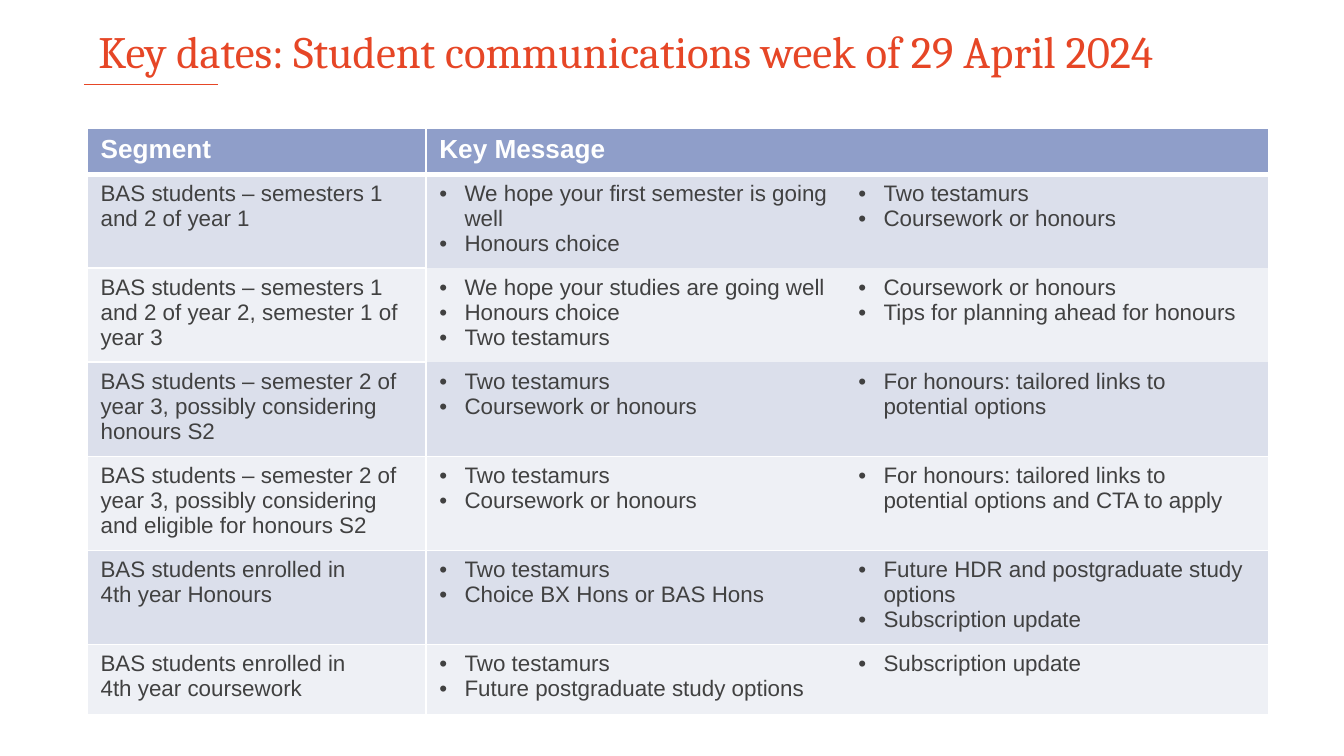
from lxml import etree
from pptx import Presentation
from pptx.dml.color import RGBColor
from pptx.enum import shapes, text
from pptx.oxml import ns
from pptx.util import Pt

COLORS = {
    "accent": "E64626",
    "header": "8F9EC9",
    "odd": "DBDFEB",
    "even": "EEF0F5",
    "body": "414141",
    "white": "FFFFFF",
}
NO_BREAK_SPACE = chr(160)
FOURTH_YEAR = f"BAS students enrolled in 4th{NO_BREAK_SPACE}year"
HEADINGS = ["Segment", "Key Message"]
SEGMENTS = [
    ("BAS students – semesters 1 and 2 of year 1",
     ["We hope your first semester is going well", "Honours choice"],
     ["Two testamurs", "Coursework or honours"]),
    ("BAS students – semesters 1 and 2 of year 2, semester 1 of year 3",
     ["We hope your studies are going well", "Honours choice", "Two testamurs"],
     ["Coursework or honours", "Tips for planning ahead for honours"]),
    ("BAS students – semester 2 of year 3, possibly considering honours S2",
     ["Two testamurs", "Coursework or honours"],
     ["For honours: tailored links to potential options"]),
    ("BAS students – semester 2 of year 3, possibly considering and eligible for honours S2",
     ["Two testamurs", "Coursework or honours"],
     ["For honours: tailored links to potential options and CTA to apply"]),
    (f"{FOURTH_YEAR} Honours",
     ["Two testamurs", "Choice BX Hons or BAS Hons"],
     ["Future HDR and postgraduate study options", "Subscription update"]),
    (f"{FOURTH_YEAR} coursework",
     ["Two testamurs", "Future postgraduate study options"],
     ["Subscription update"]),
]
COLUMN_WIDTHS = [181.5, 224.5, 227]
ROW_HEIGHTS = [24.5] + [50.4] * 5 + [37.8]
BULLET_INDENT = 13.5


def color(name):
    return RGBColor.from_string(COLORS[name])


def write(frame, lines, size=12, font="Arial", fill="body", bold=False, bullet=False):
    """Fill a text frame with one paragraph for each line."""
    frame.word_wrap = True
    for index, line in enumerate(lines):
        paragraph = frame.add_paragraph() if index else frame.paragraphs[0]
        paragraph.alignment = text.PP_ALIGN.LEFT
        run = paragraph.add_run()
        run.text = line
        run.font.size = Pt(size)
        run.font.name = font
        run.font.bold = bold
        run.font.color.rgb = color(fill)
        if bullet:
            properties = paragraph._p.get_or_add_pPr()
            properties.set("marL", str(Pt(BULLET_INDENT)))
            properties.set("indent", str(-Pt(BULLET_INDENT)))
            etree.SubElement(properties, ns.qn("a:buFont"), typeface="Arial")
            etree.SubElement(properties, ns.qn("a:buChar"), char="•")


def set_borders(cell, **widths):
    """Draw white borders of the given widths; a width of 0 hides the side."""
    properties = cell._tc.get_or_add_tcPr()
    for position, side in enumerate("LRTB"):
        width = widths.get(side, 1)
        line = etree.Element(ns.qn(f"a:ln{side}"), w=str(Pt(width)))
        if width:
            fill = etree.SubElement(line, ns.qn("a:solidFill"))
            etree.SubElement(fill, ns.qn("a:srgbClr"), val=COLORS["white"])
        else:
            etree.SubElement(line, ns.qn("a:noFill"))
        properties.insert(position, line)


def fill_cell(cell, lines, background, borders, **style):
    cell.fill.solid()
    cell.fill.fore_color.rgb = color(background)
    set_borders(cell, **borders)
    write(cell.text_frame, lines, **style)


def add_title(slide, left, top, width, height):
    title = slide.shapes.title
    title.left, title.top, title.width, title.height = map(Pt, (left, top, width, height))
    frame = title.text_frame
    frame.auto_size = text.MSO_AUTO_SIZE.NONE
    frame.vertical_anchor = text.MSO_ANCHOR.TOP
    write(frame, ["Key dates: Student communications week of 29 April 2024"],
          size=24, font="Cambria", fill="accent")

    rule_top = top + 36
    rule = slide.shapes.add_connector(
        shapes.MSO_CONNECTOR.STRAIGHT,
        Pt(left - 0.5), Pt(rule_top), Pt(left + 71.5), Pt(rule_top))
    rule.line.color.rgb = color("accent")
    rule.line.width = Pt(0.75)
    etree.SubElement(rule._element.spPr, ns.qn("a:effectLst"))


def add_segment_table(slide, left, top):
    table = slide.shapes.add_table(
        len(ROW_HEIGHTS), len(COLUMN_WIDTHS), Pt(left), Pt(top),
        Pt(sum(COLUMN_WIDTHS)), Pt(sum(ROW_HEIGHTS))).table
    for column, width in zip(table.columns, COLUMN_WIDTHS):
        column.width = Pt(width)
    for row, height in zip(table.rows, ROW_HEIGHTS):
        row.height = Pt(height)

    table.cell(0, 1).merge(table.cell(0, 2))
    for index, heading in enumerate(HEADINGS):
        fill_cell(table.cell(0, index), [heading], "header", {"B": 3},
                  size=14, fill="white", bold=True)

    for number, (segment, first, second) in enumerate(SEGMENTS, start=1):
        background = "odd" if number % 2 else "even"
        top_width = 3 if number == 1 else 1
        # The message columns run on without rules through the first three rows.
        sides = {"T": 0 if number in (2, 3) else top_width,
                 "B": 0 if number in (1, 2) else 1}
        fill_cell(table.cell(number, 0), [segment], background, {"T": top_width})
        fill_cell(table.cell(number, 1), first, background, {**sides, "R": 0}, bullet=True)
        fill_cell(table.cell(number, 2), second, background, {**sides, "L": 0}, bullet=True)


def main():
    presentation = Presentation()
    presentation.slide_width = Pt(720)
    presentation.slide_height = Pt(405)
    slide = presentation.slides.add_slide(presentation.slide_layouts[5])
    add_title(slide, 45.5, 9.25, 668, 29)
    add_segment_table(slide, 46.7, 68.8)
    presentation.save("out.pptx")


if __name__ == "__main__":
    main()
